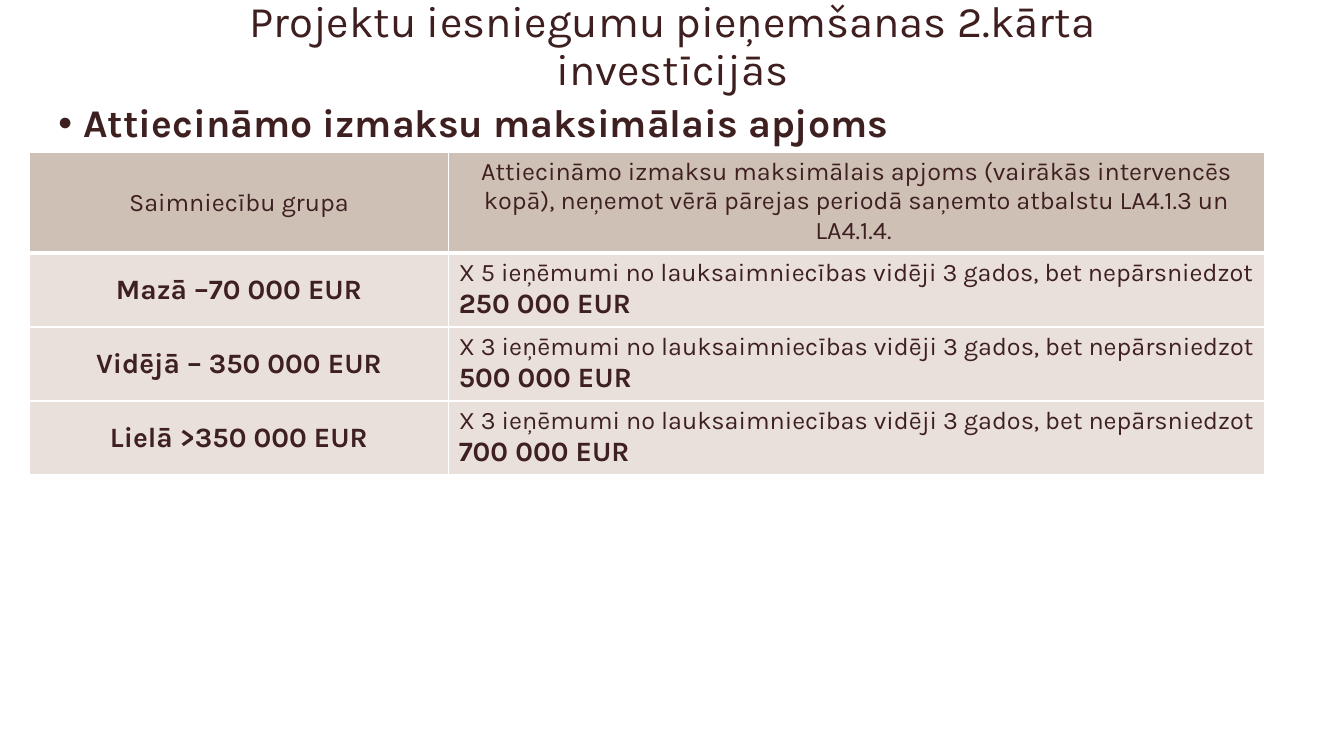
"""Build the slide on maximum eligible costs by farm group."""
from lxml import etree
from pptx import Presentation
from pptx import util as u
from pptx.dml.color import RGBColor
from pptx.enum import text
from pptx.oxml import ns

FONT = "Karla"
TITLE_INK = RGBColor(0x3E, 0x1E, 0x1F)
INK = RGBColor(0x3F, 0x20, 0x21)
HEADER_FILL = RGBColor(0xCF, 0xC0, 0xB6)
BODY_FILL = RGBColor(0xE9, 0xE0, 0xDB)
BORDER = RGBColor(0xFF, 0xFF, 0xFF)

HEADER = (
    "Saimniecību grupa",
    "Attiecināmo izmaksu maksimālais apjoms (vairākās intervencēs kopā), "
    "neņemot vērā pārejas periodā saņemto atbalstu LA4.1.3 un LA4.1.4. ",
)
FARM_GROUPS = (
    ("Mazā –70 000 EUR", 5, "250 000 EUR"),
    ("Vidējā – 350 000 EUR", 3, "500 000 EUR"),
    ("Lielā >350 000 EUR", 3, "700 000 EUR"),
)
COLUMNS = (4.16, 8.09)
HEADER_HEIGHT, ROW_HEIGHT = 0.97, 0.72


def place(sp, left, top, width, height):
    """Position a shape in inches."""
    sp.left, sp.top = u.Inches(left), u.Inches(top)
    sp.width, sp.height = u.Inches(width), u.Inches(height)


def add_run(p, content, size, bold=False, color=INK):
    """Add one formatted run to a paragraph."""
    r = p.add_run()
    r.text = content
    r.font.name = FONT
    r.font.size = u.Pt(size)
    r.font.bold = bold
    r.font.color.rgb = color


def add_title(s, content):
    """Fill and format the title placeholder."""
    sp = s.shapes.title
    place(sp, 1.59, -0.17, 10.16, 1.28)
    tf = sp.text_frame
    tf.word_wrap = True
    tf.auto_size = text.MSO_AUTO_SIZE.NONE
    tf.vertical_anchor = text.MSO_ANCHOR.MIDDLE
    p = tf.paragraphs[0]
    p.alignment = text.PP_ALIGN.CENTER
    p.line_spacing = 0.9
    add_run(p, content, 31.2, color=TITLE_INK)


def add_bullet(s, content):
    """Add the bulleted heading above the table."""
    sp = s.shapes.add_textbox(0, 0, 0, 0)
    place(sp, 0.48, 0.98, 12.71, 5.88)
    sp.text_frame.word_wrap = True
    p = sp.text_frame.paragraphs[0]
    p.line_spacing = 0.9
    props = p._p.get_or_add_pPr()
    props.set("marL", str(u.Inches(0.25)))
    props.set("indent", str(-u.Inches(0.25)))
    etree.SubElement(props, ns.qn("a:buFont"), typeface="Arial")
    etree.SubElement(props, ns.qn("a:buChar"), char="•")
    add_run(p, content, 28, bold=True)


def set_borders(cell, bottom):
    """Draw white borders round a cell, with a given bottom width."""
    props = cell._tc.get_or_add_tcPr()
    for side, width in (("L", 1), ("R", 1), ("T", 1), ("B", bottom)):
        line = etree.SubElement(props, ns.qn(f"a:ln{side}"), w=str(u.Pt(width)))
        fill = etree.SubElement(line, ns.qn("a:solidFill"))
        etree.SubElement(fill, ns.qn("a:srgbClr"), val=str(BORDER))


def fill_cell(cell, runs, fill, centered=True, middle=True, bottom=1):
    """Write runs of (text, size, bold) into a cell and style it."""
    set_borders(cell, bottom)
    cell.fill.solid()
    cell.fill.fore_color.rgb = fill
    cell.vertical_anchor = text.MSO_ANCHOR.MIDDLE if middle else text.MSO_ANCHOR.TOP
    p = cell.text_frame.paragraphs[0]
    p.alignment = text.PP_ALIGN.CENTER if centered else text.PP_ALIGN.LEFT
    for content, size, bold in runs:
        add_run(p, content, size, bold)


def add_cost_table(s):
    """Add the table of farm groups and their cost ceilings."""
    height = HEADER_HEIGHT + ROW_HEIGHT * len(FARM_GROUPS)
    frame = s.shapes.add_table(
        len(FARM_GROUPS) + 1, len(COLUMNS), u.Inches(0.29), u.Inches(1.51),
        u.Inches(sum(COLUMNS)), u.Inches(height))
    table = frame.table
    for column, width in zip(table.columns, COLUMNS):
        column.width = u.Inches(width)
    for i, row in enumerate(table.rows):
        row.height = u.Inches(ROW_HEIGHT if i else HEADER_HEIGHT)
    for j, heading in enumerate(HEADER):
        fill_cell(table.cell(0, j), [(heading, 18, False)], HEADER_FILL,
                  middle=j == 0, bottom=3)
    for i, (group, factor, ceiling) in enumerate(FARM_GROUPS, 1):
        rule = (f"X {factor} ieņēmumi no lauksaimniecības vidēji 3 gados, "
                "bet nepārsniedzot ")
        fill_cell(table.cell(i, 0), [(group, 20, True)], BODY_FILL)
        fill_cell(table.cell(i, 1), [(rule, 18, False), (ceiling, 20, True)],
                  BODY_FILL, centered=False, middle=False)


def main():
    """Create the slide and save it."""
    prs = Presentation()
    prs.slide_width, prs.slide_height = u.Inches(13.33), u.Inches(7.5)
    s = prs.slides.add_slide(prs.slide_layouts[5])
    add_title(s, "Projektu iesniegumu pieņemšanas 2.kārta investīcijās")
    add_bullet(s, "Attiecināmo izmaksu maksimālais apjoms")
    add_cost_table(s)
    prs.save("out.pptx")


if __name__ == "__main__":
    main()
